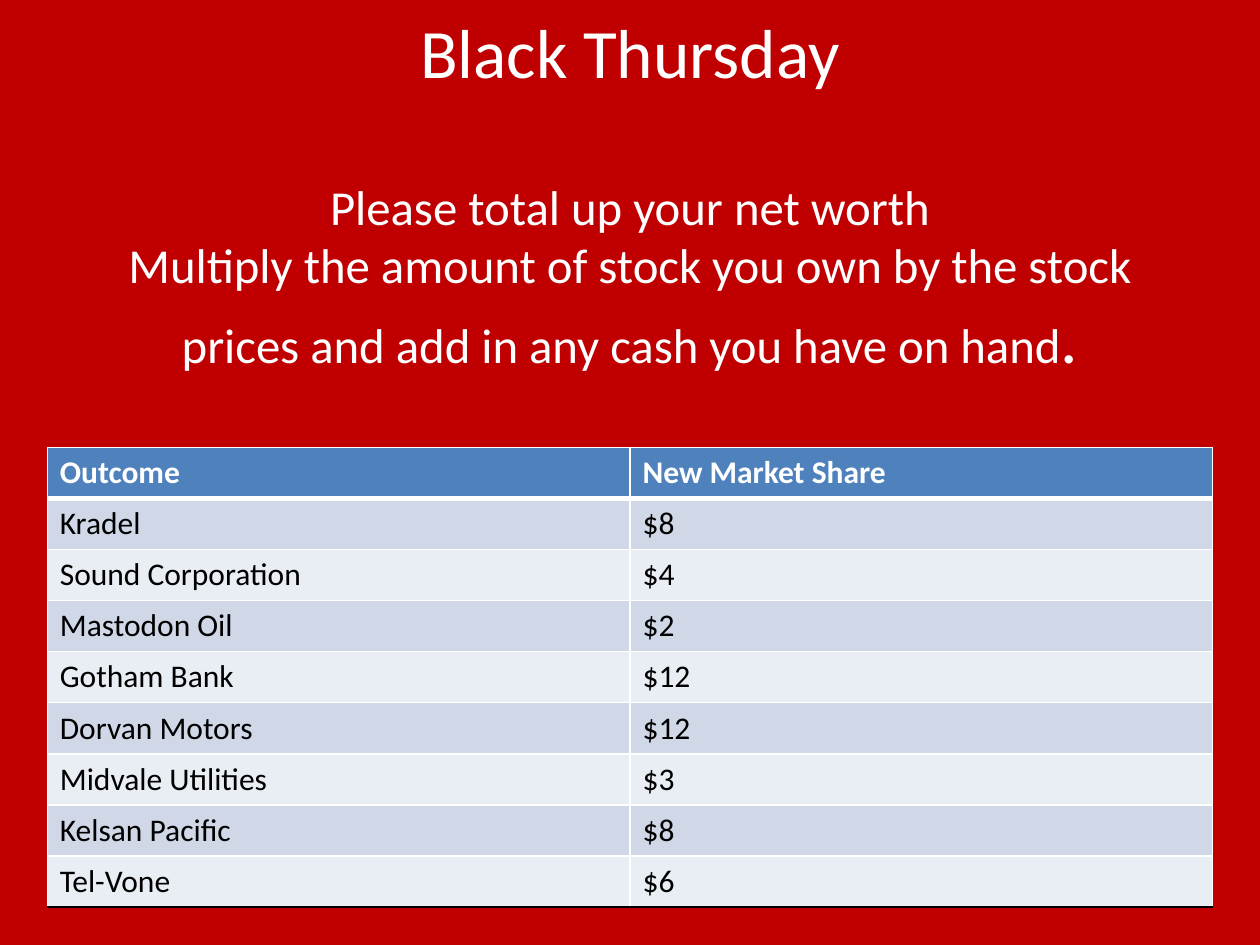
from dataclasses import dataclass

from lxml import etree
from pptx import Presentation
from pptx.dml.color import RGBColor
from pptx.enum.text import MSO_ANCHOR, PP_ALIGN
from pptx.oxml.ns import qn
from pptx.util import Inches, Pt

CENTER = PP_ALIGN.CENTER
TOP = MSO_ANCHOR.TOP


@dataclass(frozen=True)
class Theme:
    font: str = "Calibri"
    background: str = "C00000"
    light: str = "FFFFFF"
    dark: str = "000000"
    header: str = "4F81BD"
    bands: tuple = ("D0D8E8", "E9EDF4")
    title_size: float = 39.6
    body_size: float = 27.9
    table_size: float = 18
    title_gap: float = 48
    thin: float = 1
    thick: float = 3


class SlideBuilder:
    def __init__(self, presentation, theme):
        self.theme = theme
        self.width = presentation.slide_width
        self.height = presentation.slide_height
        self.slide = presentation.slides.add_slide(presentation.slide_layouts[6])
        fill = self.slide.background.fill
        fill.solid()
        fill.fore_color.rgb = RGBColor.from_string(theme.background)

    def frame(self, left, top, width, height):
        return (int(left * self.width), int(top * self.height),
                int(width * self.width), int(height * self.height))

    def style(self, run, size, color, bold=False):
        run.font.name = self.theme.font
        run.font.size = Pt(size)
        run.font.bold = bold
        run.font.color.rgb = RGBColor.from_string(color)

    def heading(self, area, paragraphs):
        text_frame = self.slide.shapes.add_textbox(*self.frame(*area)).text_frame
        text_frame.word_wrap = True
        text_frame.vertical_anchor = TOP
        text_frame.margin_top = text_frame.margin_bottom = 0
        for index, runs in enumerate(paragraphs):
            paragraph = text_frame.add_paragraph() if index else text_frame.paragraphs[0]
            paragraph.alignment = CENTER
            for text, size in runs:
                run = paragraph.add_run()
                run.text = text
                self.style(run, size, self.theme.light)
        text_frame.paragraphs[0].space_after = Pt(self.theme.title_gap)

    def border(self, cell, side, color, width):
        properties = cell._tc.get_or_add_tcPr()
        line = etree.SubElement(properties, qn(f"a:ln{side}"), w=str(Pt(width)))
        fill = etree.SubElement(line, qn("a:solidFill"))
        etree.SubElement(fill, qn("a:srgbClr"), val=color)

    def table(self, area, rows):
        theme = self.theme
        left, top, width, height = self.frame(*area)
        table = self.slide.shapes.add_table(
            len(rows), len(rows[0]), left, top, width, height).table
        table.horz_banding = False
        last = len(rows) - 1
        for row_index, values in enumerate(rows):
            is_header = row_index == 0
            background = theme.header if is_header else theme.bands[(row_index - 1) % 2]
            top_width = theme.thick if row_index == 1 else theme.thin
            bottom_width = theme.thick if is_header else theme.thin
            bottom_color = theme.dark if row_index == last else theme.light
            for column_index, value in enumerate(values):
                cell = table.cell(row_index, column_index)
                cell.text_frame.text = value
                self.style(cell.text_frame.paragraphs[0].runs[0], theme.table_size,
                           theme.light if is_header else theme.dark, is_header)
                self.border(cell, "L", theme.light, theme.thin)
                self.border(cell, "R", theme.light, theme.thin)
                self.border(cell, "T", theme.light, top_width)
                self.border(cell, "B", bottom_color, bottom_width)
                cell.fill.solid()
                cell.fill.fore_color.rgb = RGBColor.from_string(background)


def main():
    presentation = Presentation()
    presentation.slide_width = Inches(10)
    presentation.slide_height = Inches(7.5)
    theme = Theme()
    builder = SlideBuilder(presentation, theme)
    builder.heading((0.05, 0.01, 0.9, 0.45), [
        [("Black Thursday", theme.title_size)],
        [("Please total up your net worth", theme.body_size)],
        [("Multiply the amount of stock you own by the stock prices "
          "and add in any cash you have on hand", theme.body_size),
         (".", theme.title_size)],
    ])
    builder.table((0.0375, 0.4733, 0.925, 0.4867), [
        ("Outcome", "New Market Share"),
        ("Kradel", "$8"),
        ("Sound Corporation", "$4"),
        ("Mastodon Oil", "$2"),
        ("Gotham Bank", "$12"),
        ("Dorvan Motors", "$12"),
        ("Midvale Utilities", "$3"),
        ("Kelsan Pacific", "$8"),
        ("Tel-Vone", "$6"),
    ])
    presentation.save("out.pptx")


if __name__ == "__main__":
    main()
